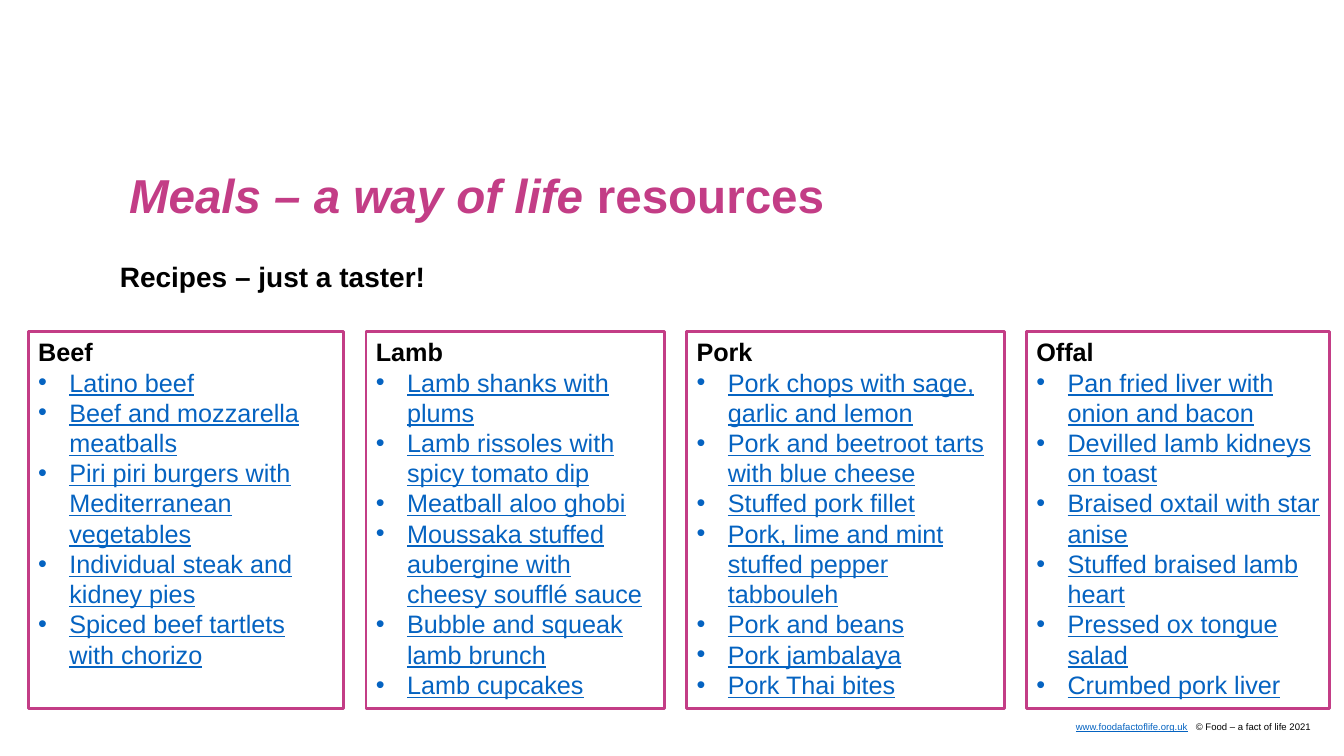
"""Build the recipe resources slide with four bordered recipe lists."""
from lxml.etree import SubElement
from pptx import Presentation
from pptx.dml.color import RGBColor
from pptx.enum.shapes import MSO_SHAPE
from pptx.enum.text import MSO_ANCHOR, PP_ALIGN
from pptx.oxml.ns import qn
from pptx.util import Inches, Pt

PINK, BLACK, LINK = "C33D86", "000000", "0563C1"
FONT = "Arial"
TITLE = [("Meals – a way of life ", True), ("resources", False)]
SUBTITLE = "Recipes – just a taster!"
WEBSITE = "www.foodafactoflife.org.uk"
COPYRIGHT = "© Food – a fact of life 2021"
RECIPES = [
    ("Beef", 3.13, [
        "Latino beef",
        "Beef and mozzarella meatballs",
        "Piri piri burgers with Mediterranean vegetables",
        "Individual steak and kidney pies",
        "Spiced beef tartlets with chorizo",
    ]),
    ("Lamb", 2.96, [
        "Lamb shanks with plums",
        "Lamb rissoles with spicy tomato dip",
        "Meatball aloo ghobi",
        "Moussaka stuffed aubergine with cheesy soufflé sauce",
        "Bubble and squeak lamb brunch",
        "Lamb cupcakes",
    ]),
    ("Pork", 3.15, [
        "Pork chops with sage, garlic and lemon",
        "Pork and beetroot tarts with blue cheese",
        "Stuffed pork fillet",
        "Pork, lime and mint stuffed pepper tabbouleh",
        "Pork and beans",
        "Pork jambalaya",
        "Pork Thai bites",
    ]),
    ("Offal", 3.01, [
        "Pan fried liver with onion and bacon",
        "Devilled lamb kidneys on toast",
        "Braised oxtail with star anise",
        "Stuffed braised lamb heart",
        "Pressed ox tongue salad",
        "Crumbed pork liver",
    ]),
]
LIST_LEFT, LIST_TOP, LIST_HEIGHT, LIST_GAP = 0.28, 3.29, 3.74, 0.22
LIST_SIZE, LIST_LEADING, LIST_INDENT = 18, 21.6, 0.31
WEBSITE_TAB = 1.19


def color(value):
    return RGBColor.from_string(value)


def add_span(para, text, size, shade, bold=False, italic=False, underline=False):
    span = para.add_run()
    span.text = text
    font = span.font
    font.name, font.size = FONT, Pt(size)
    font.bold, font.italic, font.underline = bold, italic, underline
    font.color.rgb = color(shade)


def add_text_box(page, left, top, width, height, inset=True):
    frame = page.shapes.add_textbox(*map(Inches, (left, top, width, height))).text_frame
    frame.word_wrap = True
    if not inset:
        frame.margin_left = frame.margin_right = frame.margin_top = frame.margin_bottom = 0
    return frame.paragraphs[0]


def add_bullet(para):
    properties = para._p.get_or_add_pPr()
    indent = Inches(LIST_INDENT)
    properties.set("marL", str(indent))
    properties.set("indent", str(-indent))
    SubElement(properties, qn("a:buFont"), typeface=FONT)
    SubElement(properties, qn("a:buChar"), char="•")


def add_recipe_list(page, left, width, heading, recipes):
    box = page.shapes.add_shape(
        MSO_SHAPE.RECTANGLE, *map(Inches, (left, LIST_TOP, width, LIST_HEIGHT)))
    box.shadow.inherit = False
    box.fill.background()
    box.line.color.rgb = color(PINK)
    box.line.width = Pt(2)
    frame = box.text_frame
    frame.word_wrap = True
    frame.vertical_anchor = MSO_ANCHOR.TOP
    for index, text in enumerate([heading] + recipes):
        para = frame.add_paragraph() if index else frame.paragraphs[0]
        para.alignment = PP_ALIGN.LEFT
        para.line_spacing = Pt(LIST_LEADING)
        if index:
            add_bullet(para)
            add_span(para, text, LIST_SIZE, LINK, underline=True)
        else:
            add_span(para, text, LIST_SIZE, BLACK, bold=True)


def add_footer(page):
    para = add_text_box(page, 10.67, 7.15, 2.4, 0.11, inset=False)
    tabs = SubElement(para._p.get_or_add_pPr(), qn("a:tabLst"))
    SubElement(tabs, qn("a:tab"), pos=str(Inches(WEBSITE_TAB)), algn="l")
    add_span(para, WEBSITE, 6.8, LINK, underline=True)
    add_span(para, "\t" + COPYRIGHT, 6.8, BLACK)


def main():
    deck = Presentation()
    deck.slide_width, deck.slide_height = Inches(13.33), Inches(7.5)
    page = deck.slides.add_slide(deck.slide_layouts[6])
    add_footer(page)
    title = add_text_box(page, 1.28, 1.71, 10.63, 0.79, inset=False)
    title.line_spacing = 0.9
    for text, italic in TITLE:
        add_span(title, text, 34, PINK, bold=True, italic=italic)
    subtitle = add_text_box(page, 1.09, 2.53, 5.7, 0.44)
    add_span(subtitle, SUBTITLE, 20, BLACK, bold=True)
    left = LIST_LEFT
    for heading, width, recipes in RECIPES:
        add_recipe_list(page, left, width, heading, recipes)
        left += width + LIST_GAP
    deck.save("out.pptx")


if __name__ == "__main__":
    main()
